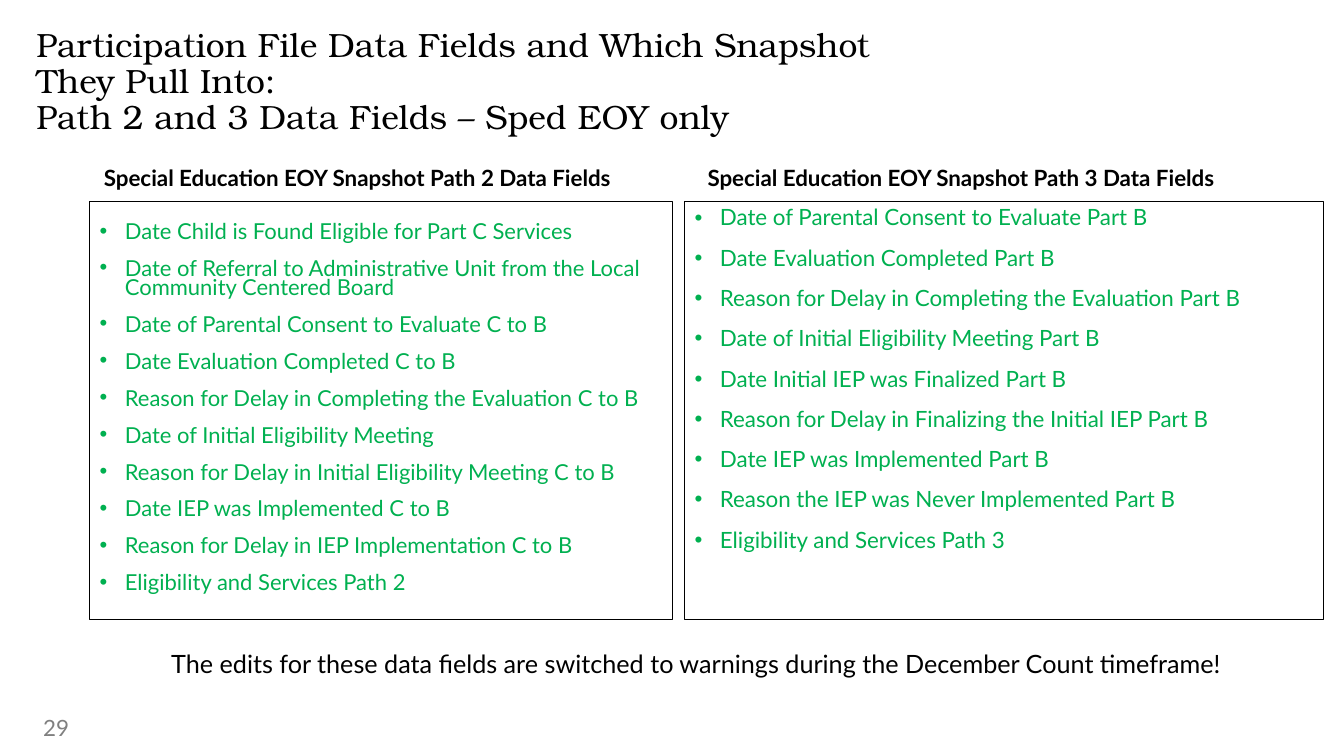
from dataclasses import dataclass

from pptx import Presentation
from pptx.dml.color import RGBColor
from pptx.enum.text import MSO_ANCHOR, MSO_AUTO_SIZE, PP_ALIGN
from pptx.util import Pt

TOP = MSO_ANCHOR.TOP
NO_FIT = MSO_AUTO_SIZE.NONE
LEFT = PP_ALIGN.LEFT

COLORS = {"text": "000000", "field": "00B050", "number": "808080"}
BODY_FONT = "Lato"
TITLE_FONT = "TeX Gyre Bonum"
COMPARISON_LAYOUT = 4
INDENT = Pt(18)
LIST_TOP, LIST_HEIGHT = 144, 298
HEADING_TOP, HEADING_HEIGHT = 113.8, 48


@dataclass
class Style:
    size: float
    color: str = "text"
    font: str = BODY_FONT
    bold: bool = False


@dataclass
class Column:
    heading: str
    heading_left: float
    heading_width: float
    list_left: float
    list_width: float
    top_inset: float
    size: float
    line_spacing: float
    gap: float
    fields: list[str]


COLUMNS = [
    Column("Special Education EOY Snapshot Path 2 Data Fields",
           67, 422, 64, 416.2, 16.8, 15.7, 0.7, 13.2, [
               "Date Child is Found Eligible for Part C Services",
               "Date of Referral to Administrative Unit from the Local Community Centered Board",
               "Date of Parental Consent to Evaluate C to B",
               "Date Evaluation Completed C to B",
               "Reason for Delay in Completing the Evaluation C to B",
               "Date of Initial Eligibility Meeting",
               "Reason for Delay in Initial Eligibility Meeting C to B",
               "Date IEP was Implemented C to B",
               "Reason for Delay in IEP Implementation C to B",
               "Eligibility and Services Path 2",
           ]),
    Column("Special Education EOY Snapshot Path 3 Data Fields",
           498.2, 404, 489, 455.8, 3.6, 16, 0.9, 11.5, [
               "Date of Parental Consent to Evaluate Part B",
               "Date Evaluation Completed Part B",
               "Reason for Delay in Completing the Evaluation Part B",
               "Date of Initial Eligibility Meeting Part B",
               "Date Initial IEP was Finalized Part B",
               "Reason for Delay in Finalizing the Initial IEP Part B",
               "Date IEP was Implemented Part B",
               "Reason the IEP was Never Implemented Part B",
               "Eligibility and Services Path 3",
           ]),
]


def place(shape, left: float, top: float, width: float, height: float):
    """Position a text shape and return its top-anchored text frame."""
    shape.left, shape.top = Pt(left), Pt(top)
    shape.width, shape.height = Pt(width), Pt(height)
    frame = shape.text_frame
    frame.word_wrap = True
    frame.auto_size = NO_FIT
    frame.vertical_anchor = TOP
    return frame


def add_run(paragraph, text: str, style: Style) -> None:
    run = paragraph.add_run()
    run.text = text
    run.font.name = style.font
    run.font.size = Pt(style.size)
    run.font.bold = style.bold
    run.font.color.rgb = RGBColor.from_string(COLORS[style.color])


def write_line(frame, text: str, style: Style) -> None:
    paragraph = frame.paragraphs[0]
    paragraph.alignment = LEFT
    paragraph.space_before = Pt(0)
    add_run(paragraph, text, style)


def fill_column(column: Column, heading, field_list) -> None:
    frame = place(heading, column.heading_left, HEADING_TOP,
                  column.heading_width, HEADING_HEIGHT)
    write_line(frame, column.heading, Style(16, bold=True))

    frame = place(field_list, column.list_left, LIST_TOP,
                  column.list_width, LIST_HEIGHT)
    frame.margin_top = Pt(column.top_inset)
    field_list.line.color.rgb = RGBColor.from_string(COLORS["text"])
    field_list.line.width = Pt(0.25)
    for index, field in enumerate(column.fields):
        paragraph = frame.add_paragraph() if index else frame.paragraphs[0]
        properties = paragraph._p.get_or_add_pPr()
        properties.set("marL", str(INDENT))
        properties.set("indent", str(-INDENT))
        paragraph.line_spacing = column.line_spacing
        paragraph.space_before = Pt(column.gap if index else 0)
        add_run(paragraph, field, Style(column.size, "field"))


def main() -> None:
    presentation = Presentation()
    presentation.slide_width, presentation.slide_height = Pt(960), Pt(540)
    slide = presentation.slides.add_slide(presentation.slide_layouts[COMPARISON_LAYOUT])
    title, *bodies = slide.placeholders

    # Title
    frame = place(title, 26, 20.2, 638.6, 59.8)
    frame.margin_left = frame.margin_right = frame.margin_top = frame.margin_bottom = Pt(0)
    title_style = Style(24, font=TITLE_FONT)
    write_line(frame, "Participation File Data Fields and Which Snapshot They Pull Into:",
               title_style)
    paragraph = frame.paragraphs[0]
    paragraph.line_spacing = 0.9
    paragraph.add_line_break()
    add_run(paragraph, "Path 2 and 3 Data Fields – Sped EOY only", title_style)

    # Headings and framed lists
    for column, heading, field_list in zip(COLUMNS, bodies[::2], bodies[1::2]):
        fill_column(column, heading, field_list)

    # Closing note and slide number
    for text, bounds, style in (
        ("The edits for these data fields are switched to warnings "
         "during the December Count timeframe!", (115.2, 459.4, 807.8, 29), Style(18)),
        ("29", (23.8, 506.2, 216, 29), Style(16, "number")),
    ):
        box = slide.shapes.add_textbox(*map(Pt, bounds))
        write_line(place(box, *bounds), text, style)

    presentation.save("out.pptx")


if __name__ == "__main__":
    main()
